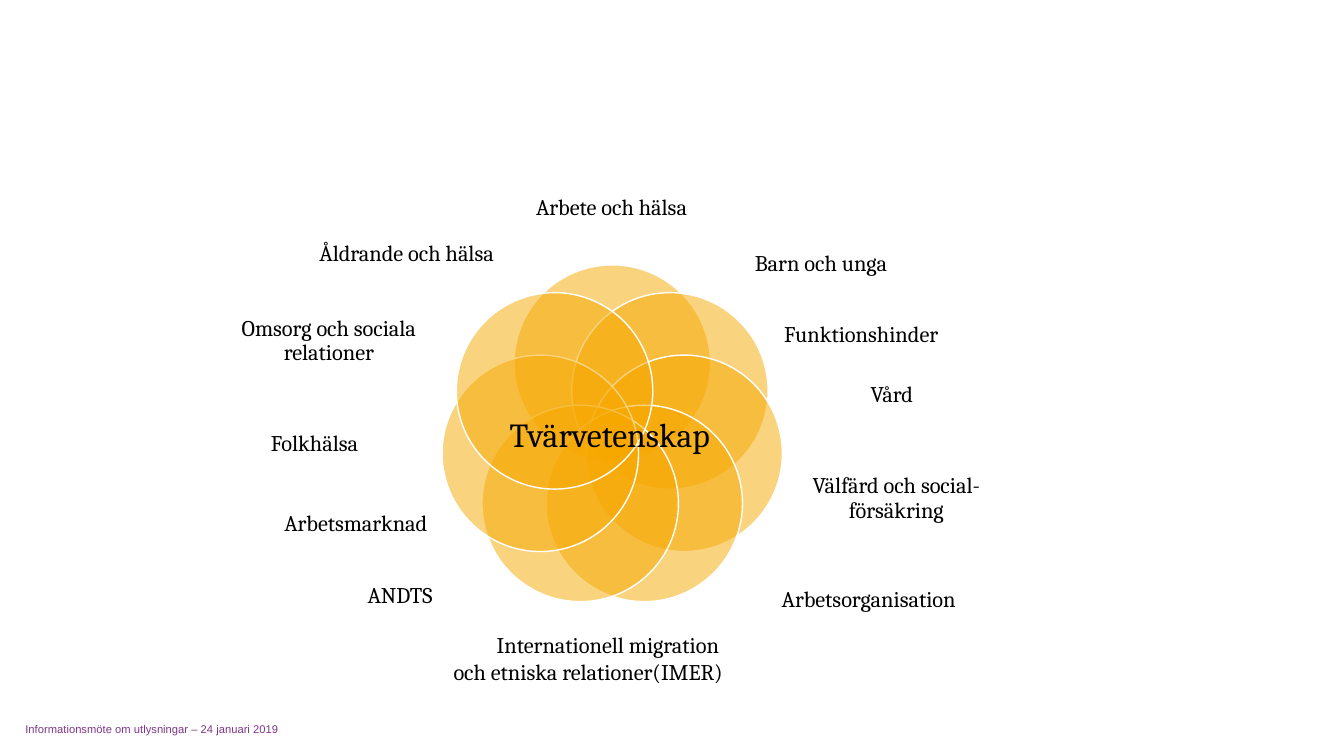
from dataclasses import dataclass
from math import cos, pi, sin
from typing import Any

from lxml import etree
from pptx import Presentation
from pptx import util as u
from pptx.dml.color import RGBColor
from pptx.enum import shapes as sh, text as tx
from pptx.oxml.ns import qn

MID, LEFT = tx.PP_ALIGN.CENTER, tx.PP_ALIGN.LEFT


@dataclass(frozen=True)
class Theme:
    petal: RGBColor = RGBColor(0xF6, 0xA8, 0x00)
    white: RGBColor = RGBColor(0xFF, 0xFF, 0xFF)
    black: RGBColor = RGBColor(0x00, 0x00, 0x00)
    plum: RGBColor = RGBColor(0x80, 0x36, 0x89)
    serif: str = "Cambria"
    sans: str = "Arial"
    core: int = 24
    body: int = 16
    foot: int = 8


@dataclass(frozen=True)
class Style:
    size: int
    font: str
    color: RGBColor
    frame: dict[str, Any]
    para: dict[str, Any]


@dataclass(frozen=True)
class Label:
    words: str
    left: float
    top: float
    width: float
    height: float
    aligns: tuple = (MID,)


T = Theme()

# Frame formats: tight boxes carry no margins, loose boxes grow with the text
TIGHT = {"margin_left": 0, "margin_right": 0, "margin_top": 0, "margin_bottom": 0}
RING = {**TIGHT, "vertical_anchor": tx.MSO_ANCHOR.MIDDLE}
BASE = {**TIGHT, "vertical_anchor": tx.MSO_ANCHOR.BOTTOM}
LOOSE = {"auto_size": tx.MSO_AUTO_SIZE.SHAPE_TO_FIT_TEXT}

INNER = Style(T.body, T.serif, T.black, RING, {"line_spacing": 0.9})
OUTER = Style(T.body, T.serif, T.black, LOOSE, {})
CORE = Style(T.core, T.serif, T.black, LOOSE, {})
FOOT = Style(T.foot, T.sans, T.plum, BASE, {})

# Flower geometry in cm
COUNT, SIZE, REACH = 7, 4.95, 1.86
MID_X, MID_Y = 15.43, 11.01

THEMES = [
    Label("Arbete och hälsa", 12.67, 4.85, 5.49, 0.79),
    Label("Vård", 19.3, 9.35, 6.35, 1.24),
    Label("Välfärd och social-försäkring", 19.96, 11.81, 5.26, 1.52),
    Label("Arbetsorganisation", 19.05, 14.73, 5.69, 0.79),
    Label("Arbetsmarknad", 4.93, 12.85, 8.08, 0.71),
    Label("Folkhälsa ", 5.36, 10.87, 5.26, 0.66),
    Label("Omsorg och sociala relationer", 5.79, 6.68, 5, 3.86),
]
EXTRAS = [
    Label("Åldrande och hälsa", 7.42, 5.89, 5.66, 0.94),
    Label("ANDTS ", 7.44, 14.53, 5.41, 0.97),
    Label("Barn och unga", 18.44, 6.15, 4.5, 0.97),
    Label("Internationell migration \noch etniska relationer(IMER)",
          11.18, 15.77, 8.41, 1.65, (MID, LEFT)),
    Label("Funktionshinder", 19.28, 7.95, 4.85, 0.97),
]
CENTER = Label("Tvärvetenskap ", 11.18, 10.31, 8.56, 1.3)
FOOTER = Label("Informationsmöte om utlysningar – 24 januari 2019",
               0.64, 17.83, 11.43, 0.71, (LEFT,))


def apply(target: Any, values: dict[str, Any]) -> None:
    for name, value in values.items():
        setattr(target, name, value)


def write(shapes: Any, label: Label, style: Style) -> None:
    place = (label.left, label.top, label.width, label.height)
    frame = shapes.add_textbox(*map(u.Cm, place)).text_frame
    frame.text = label.words
    apply(frame, {"word_wrap": True, **style.frame})
    for para, align in zip(frame.paragraphs, label.aligns):
        apply(para, {"alignment": align, **style.para})
        for run in para.runs:
            apply(run.font, {"size": u.Pt(style.size), "name": style.font})
            run.font.color.rgb = style.color


def petal(shapes: Any, index: int) -> None:
    angle = 2 * pi * index / COUNT
    left = MID_X + REACH * sin(angle) - SIZE / 2
    top = MID_Y - REACH * cos(angle) - SIZE / 2
    disc = shapes.add_shape(sh.MSO_SHAPE.OVAL, *map(u.Cm, (left, top, SIZE, SIZE)))
    disc.shadow.inherit = False
    disc.fill.solid()
    disc.fill.fore_color.rgb = T.petal
    tint = disc.fill._xPr.find(qn("a:solidFill"))[0]
    etree.SubElement(tint, qn("a:alpha"), val="50000")
    disc.line.color.rgb = T.white
    disc.line.width = u.Pt(1)


def main() -> None:
    deck = Presentation()
    apply(deck, {"slide_width": u.Cm(33.87), "slide_height": u.Cm(19.05)})
    slide = deck.slides.add_slide(deck.slide_layouts[6])

    # Flower of circles with its ring of themes
    flower = slide.shapes.add_group_shape().shapes
    for index, label in enumerate(THEMES):
        petal(flower, index)
        write(flower, label, INNER)

    # Centre word, further themes and footer
    write(slide.shapes, CENTER, CORE)
    for label in EXTRAS:
        write(slide.shapes, label, OUTER)
    write(slide.shapes, FOOTER, FOOT)
    deck.save("out.pptx")


if __name__ == "__main__":
    main()
